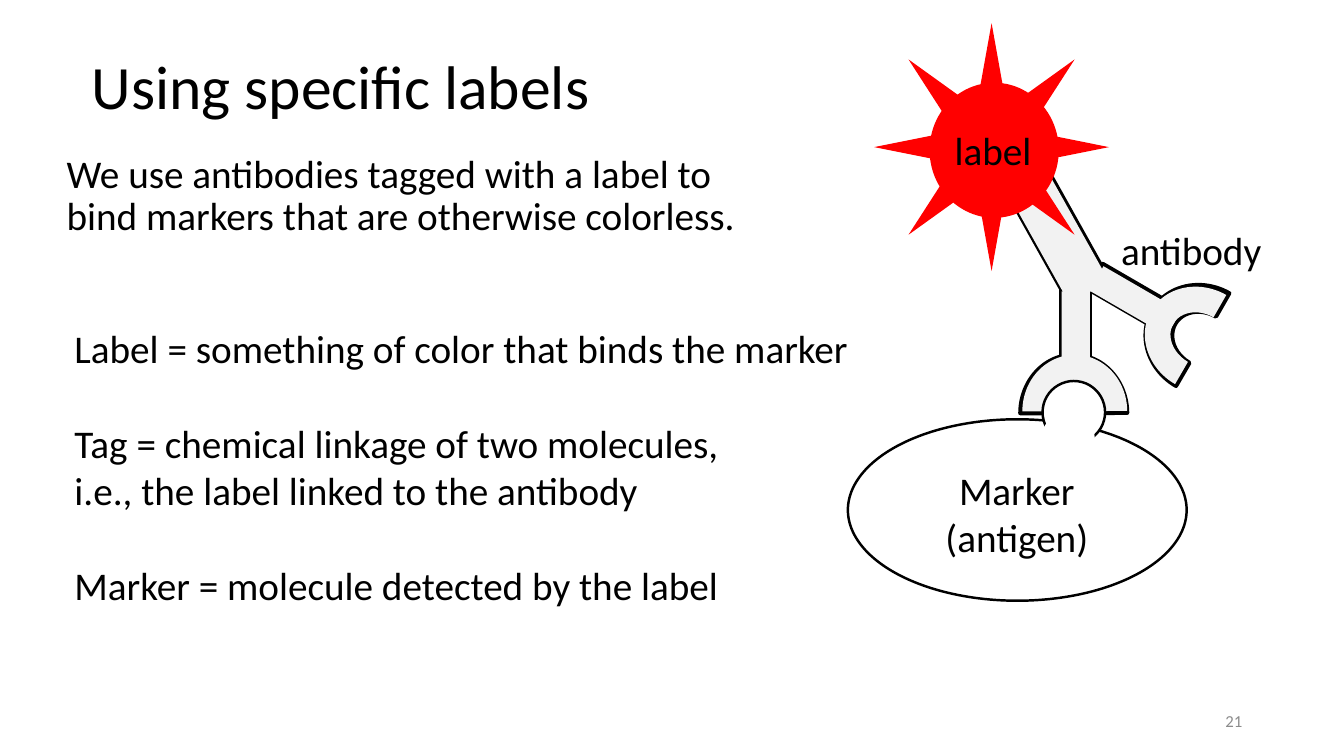
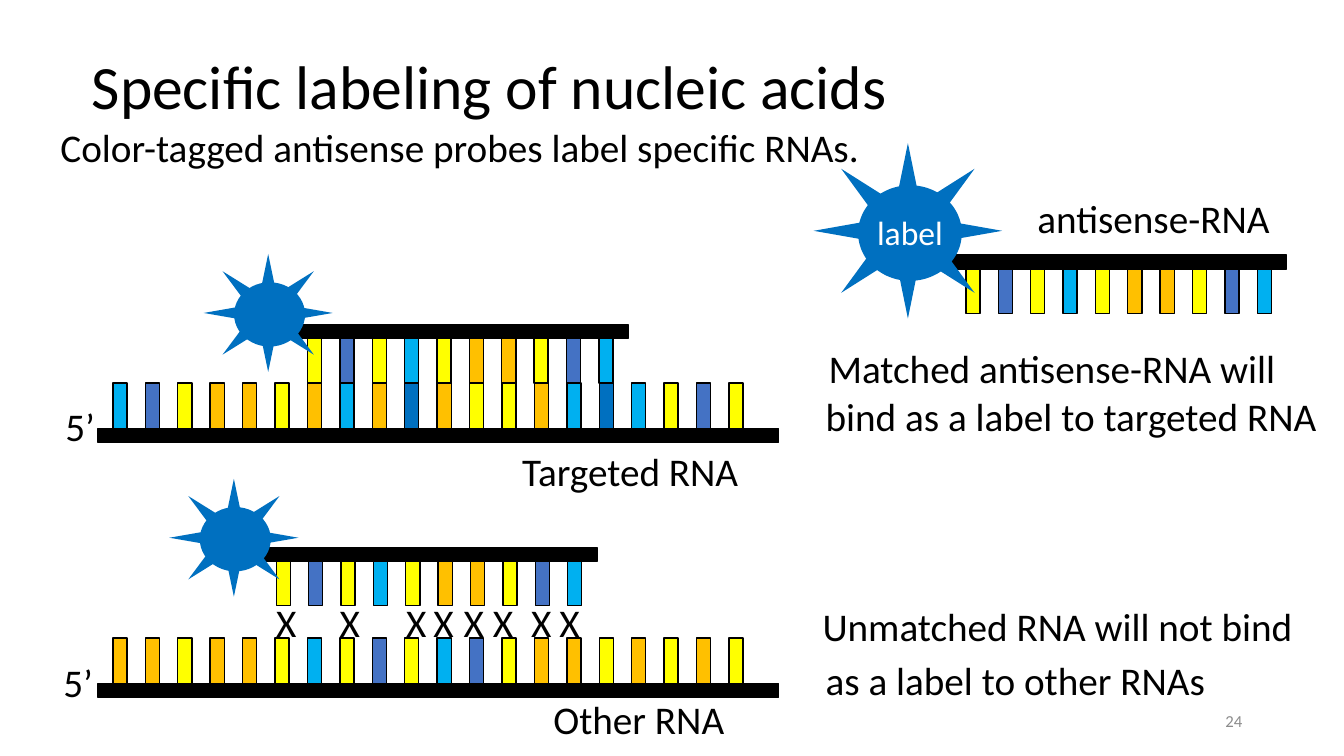
from dataclasses import dataclass
from typing import NamedTuple

from lxml.etree import SubElement
from pptx import Presentation
from pptx.dml.color import RGBColor
from pptx.enum.shapes import MSO_SHAPE
from pptx.enum.text import MSO_ANCHOR, MSO_AUTO_SIZE, PP_ALIGN
from pptx.oxml.ns import qn
from pptx.util import Inches, Pt


# Theme: colours, font and type sizes
@dataclass(frozen=True)
class Theme:
    font: str = "Calibri"
    black: str = "000000"
    white: str = "FFFFFF"
    pale: str = "F2F2F2"
    red: str = "FF0000"
    blue: str = "0070C0"
    grey: str = "8C8C8C"
    head: int = 44
    text: int = 28
    small: int = 24
    foot: int = 12


THEME = Theme()
BASES = {"Y": "FFFF00", "O": "FFC000", "C": "00B0F0", "B": "4472C4", "D": THEME.blue}


class Box(NamedTuple):
    left: float
    top: float
    width: float
    height: float


class Part(NamedTuple):
    kind: MSO_SHAPE
    box: Box
    turn: float = 0


class Note(NamedTuple):
    text: str
    box: Box
    size: int = THEME.text
    ink: str = THEME.black
    align: PP_ALIGN = PP_ALIGN.LEFT
    wrap: bool = False
    gap: int = 0


class Strand(NamedTuple):
    code: str
    first: float  # left edge of the first base
    last: float  # left edge of the last base
    bar: Box
    drop: float  # top of the bases, measured from the bar


# Drawing helpers
def place(shape, box: Box) -> None:
    shape.left, shape.top, shape.width, shape.height = map(Inches, box)


def style(frame, size: int, ink: str = THEME.black,
          align: PP_ALIGN = PP_ALIGN.LEFT) -> None:
    for para in frame.paragraphs:
        para.alignment = align
        for run in para.runs:
            run.font.name = THEME.font
            run.font.size = Pt(size)
            run.font.color.rgb = RGBColor.from_string(ink)


def draw(slide, part: Part, fill: str, edge: str = "", weight: float = 1):
    shape = slide.shapes.add_shape(part.kind, *map(Inches, part.box))
    shape.rotation = part.turn
    shape.shadow.inherit = False
    shape.fill.solid()
    shape.fill.fore_color.rgb = RGBColor.from_string(fill)
    if edge:
        shape.line.color.rgb = RGBColor.from_string(edge)
        shape.line.width = Pt(weight)
    else:
        shape.line.fill.background()
    return shape


def write(slide, note: Note):
    frame = slide.shapes.add_textbox(*map(Inches, note.box)).text_frame
    frame.word_wrap = note.wrap
    frame.text = note.text
    for para in frame.paragraphs[1:]:
        para.space_before = Pt(note.gap)
    style(frame, note.size, note.ink, note.align)
    return frame


def star(slide, box: Box, fill: str) -> None:
    """A sun with a disc that covers its centre."""
    sun = draw(slide, Part(MSO_SHAPE.SUN, box), fill)
    sun.adjustments[0] = 0.33
    left, top, width, height = box
    disc = Box(left + 0.236 * width, top + 0.24 * height, 0.55 * width, 0.545 * height)
    draw(slide, Part(MSO_SHAPE.OVAL, disc), fill)


def chain(slide, strand: Strand) -> None:
    """Evenly spaced bases along a black bar."""
    step = (strand.last - strand.first) / (len(strand.code) - 1)
    for spot, base in enumerate(strand.code):
        box = Box(strand.first + spot * step, strand.bar.top + strand.drop, 0.14, 0.46)
        draw(slide, Part(MSO_SHAPE.RECTANGLE, box), BASES[base], THEME.black)
    draw(slide, Part(MSO_SHAPE.RECTANGLE, strand.bar), THEME.black, THEME.black)


def probe(slide, left: float, top: float) -> None:
    """The antisense strand, its bases hanging below the bar."""
    bar = Box(left, top, 3.53, 0.14)
    chain(slide, Strand("YBYCYOOYBC", left + 0.35, left + 3.24, bar, 0.12))


def target(slide, code: str, top: float) -> None:
    """A long RNA, its bases standing on the bar."""
    chain(slide, Strand(code, 1.12, 7.23, Box(0.97, top, 6.75, 0.14), -0.45))


def start(deck, title: str, body: str, box: Box, page: str):
    """A slide with the shared title, body and page number."""
    slide = deck.slides.add_slide(deck.slide_layouts[1])
    head, main = slide.placeholders
    place(head, Box(0.81, 0.16, 11.5, 1.45))
    place(main, box)
    for shape, text, size in ((head, title, THEME.head), (main, body, THEME.text)):
        frame = shape.text_frame
        frame.text = text
        frame.word_wrap = True
        frame.auto_size = MSO_AUTO_SIZE.NONE
        frame.paragraphs[0].line_spacing = 0.9
        style(frame, size)
    head.text_frame.vertical_anchor = MSO_ANCHOR.MIDDLE
    para = main.text_frame.paragraphs[0]
    para.space_before = Pt(10)
    props = para._p.get_or_add_pPr()
    props.set("marL", "0")
    props.set("indent", "0")
    SubElement(props, qn("a:buNone"))
    foot = write(slide, Note(page, Box(9.42, 6.95, 3, 0.4), THEME.foot,
                             THEME.grey, PP_ALIGN.RIGHT, True))
    foot.vertical_anchor = MSO_ANCHOR.MIDDLE
    return slide


# Slide 1: an antibody that carries a label
ARC, BLOCK, OVAL = MSO_SHAPE.BLOCK_ARC, MSO_SHAPE.RECTANGLE, MSO_SHAPE.OVAL
TILT, LEAN = 300.1, 330.8
RIM = (
    Part(ARC, Box(10.12, 3.52, 1.06, 1.16)),
    Part(BLOCK, Box(10.52, 2.87, 0.29, 0.9)),
    Part(ARC, Box(11.4, 2.79, 1.06, 1.16), TILT),
    Part(BLOCK, Box(11.11, 2.52, 0.29, 0.9), TILT),
    Part(BLOCK, Box(10.25, 1.66, 0.46, 1.31), LEAN),
)
CORE = (
    Part(ARC, Box(10.14, 3.52, 1.04, 1.12)),
    Part(BLOCK, Box(10.53, 2.89, 0.28, 0.87)),
    Part(ARC, Box(11.4, 2.8, 1.02, 1.14), TILT),
    Part(BLOCK, Box(11.12, 2.54, 0.28, 0.89), TILT),
    Part(BLOCK, Box(10.27, 1.72, 0.45, 1.26), LEAN),
)
TERMS = "\n".join((
    "Label = something of color that binds the marker",
    "Tag = chemical linkage of two molecules,\vi.e., the label linked to the antibody",
    "Marker = molecule detected by the label",
))
LABEL_NOTES = (
    Note("antibody", Box(11.02, 2.2, 1.61, 0.57)),
    Note("Marker\n(antigen)", Box(9.27, 4.58, 1.63, 1.04), align=PP_ALIGN.CENTER),
    Note("label", Box(9.37, 1.2, 0.97, 0.57)),
    Note(TERMS, Box(0.64, 3.17, 8.03, 2.93), wrap=True, gap=34),
)


def label_slide(deck) -> None:
    slide = start(
        deck, "Using specific labels",
        "We use antibodies tagged with a label to bind markers that are otherwise colorless.",
        Box(0.56, 1.48, 7.19, 1.43), "21")
    for parts, fill, edge in ((RIM, THEME.black, THEME.black), (CORE, THEME.pale, "")):
        for part in parts:
            shape = draw(slide, part, fill, edge, 3)
            if part.kind == ARC:
                for spot, value in enumerate((108, 215.72, 0.25)):
                    shape.adjustments[spot] = value
    star(slide, Box(8.67, 0.23, 2.33, 2.46), THEME.red)
    # Marker with its knob; a white disc opens the seam between them
    for box, edge, weight in (
        (Box(8.41, 4.16, 3.36, 1.8), THEME.black, 1.75),
        (Box(10.34, 3.78, 0.62, 0.62), THEME.black, 1.75),
        (Box(10.34, 4.09, 0.51, 0.51), THEME.white, 1),
    ):
        draw(slide, Part(OVAL, box), THEME.white, edge, weight)
    for note in LABEL_NOTES:
        write(slide, note)


# Slide 2: a probe that meets a matched and an unmatched RNA
PROBE_NOTES = (
    Note("label", Box(8.6, 2.05, 0.89, 0.43), THEME.small, THEME.white),
    Note("antisense-RNA", Box(10.19, 1.88, 2.54, 0.57)),
    Note("Matched antisense-RNA will", Box(8.12, 3.37, 4.82, 0.57), wrap=True),
    Note("bind as a label to targeted RNA", Box(8.09, 3.84, 5.12, 0.57)),
    Note("Unmatched RNA will not bind", Box(8.06, 5.93, 4.87, 0.57), wrap=True),
    Note("as a label to other RNAs", Box(8.09, 6.46, 4.01, 0.57)),
    Note("5’", Box(0.55, 3.94, 0.5, 0.57)),
    Note("5’", Box(0.53, 6.48, 0.5, 0.57)),
    Note("Targeted RNA", Box(5.08, 4.39, 2.37, 0.57)),
    Note("Other RNA", Box(5.39, 6.85, 1.92, 0.57)),
)
STOPS = (0.63, 1.29, 1.56, 1.86, 2.15, 2.53, 2.81)


def cross(slide) -> None:
    """One X for each mismatch, set on tab stops."""
    text = "\t".join("X" * (len(STOPS) + 1))
    frame = write(slide, Note(text, Box(2.64, 5.89, 7.18, 0.57), wrap=True))
    tabs = SubElement(frame.paragraphs[0]._p.get_or_add_pPr(), qn("a:tabLst"))
    for stop in STOPS:
        SubElement(tabs, qn("a:tab"), pos=str(Inches(stop)), algn="l")


def probe_slide(deck) -> None:
    slide = start(
        deck, "Specific labeling of nucleic acids",
        "Color-tagged antisense probes label specific RNAs.",
        Box(0.5, 1.23, 8.43, 2.11), "24")
    for left, top in ((9.23, 2.53), (2.7, 3.22), (2.39, 5.43)):
        probe(slide, left, top)
    for code, top in (("CBYOOYOCODOYYOCDCYBY", 4.25), ("OOYOOYCYBYCBYOOYOYOY", 6.78)):
        target(slide, code, top)
    for box in (Box(8.07, 1.42, 1.87, 1.74), Box(2.02, 2.52, 1.28, 1.17),
                Box(1.68, 4.75, 1.28, 1.17)):
        star(slide, box, THEME.blue)
    for note in PROBE_NOTES:
        write(slide, note)
    cross(slide)


def main() -> None:
    deck = Presentation()
    deck.slide_width, deck.slide_height = Inches(13.33), Inches(7.5)
    label_slide(deck)
    probe_slide(deck)
    deck.save("out.pptx")


if __name__ == "__main__":
    main()
